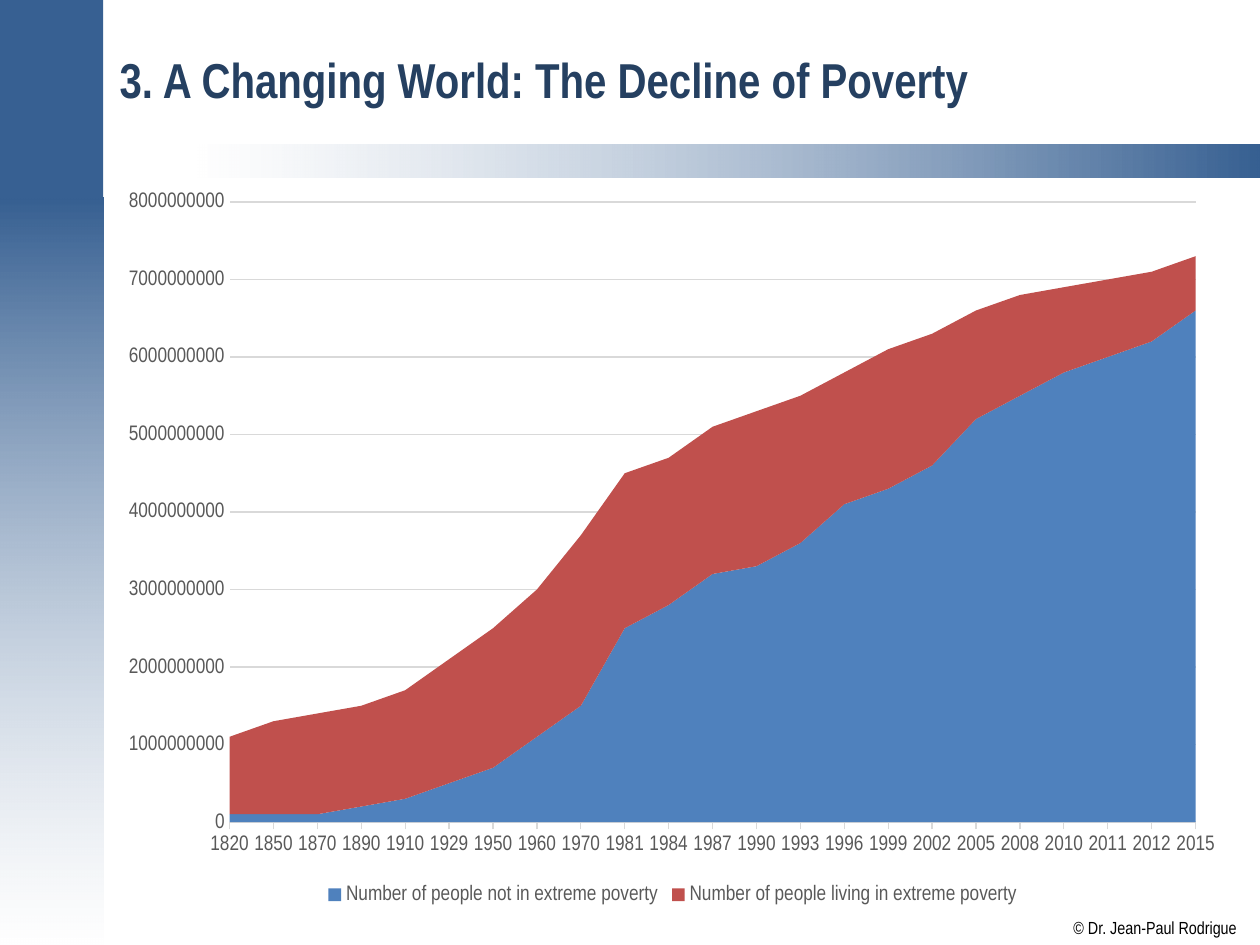
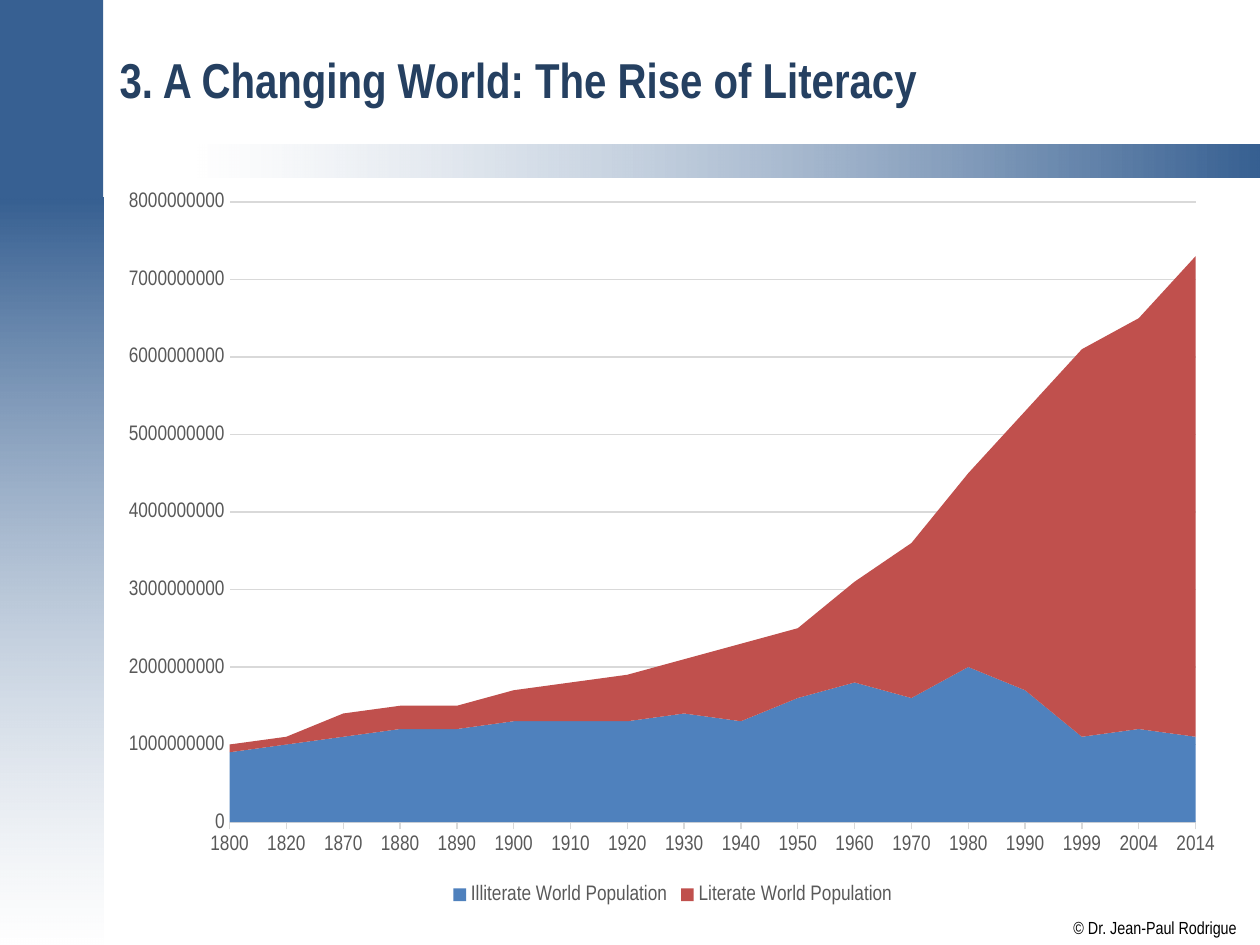
from dataclasses import dataclass

from lxml import etree
from pptx import Presentation
from pptx.chart.data import CategoryChartData
from pptx.dml.color import RGBColor
from pptx.enum.chart import XL_CHART_TYPE, XL_LEGEND_POSITION, XL_TICK_MARK
from pptx.enum.shapes import MSO_SHAPE
from pptx.enum.text import MSO_ANCHOR, PP_ALIGN
from pptx.oxml import parse_xml
from pptx.oxml.ns import nsdecls, qn
from pptx.util import Inches, Pt

RECTANGLE = MSO_SHAPE.RECTANGLE
STACKED_AREA = XL_CHART_TYPE.AREA_STACKED
LEGEND_BOTTOM = XL_LEGEND_POSITION.BOTTOM
TICK_NONE, TICK_OUT = XL_TICK_MARK.NONE, XL_TICK_MARK.OUTSIDE
MIDDLE, LEFT = MSO_ANCHOR.MIDDLE, PP_ALIGN.LEFT

COLUMNS, ROWS = 100, 75
HUNDRED_MILLION = 10 ** 8
CREDIT = "© Dr. Jean-Paul Rodrigue"


@dataclass(frozen=True)
class Theme:
    font: str = "Arial Narrow"
    title_size: int = 28
    axis_size: int = 12
    small_size: int = 10
    title: str = "254061"
    band: str = "376092"
    paper: str = "FFFFFF"
    ink: str = "000000"
    label: str = "595959"
    rule: str = "D9D9D9"
    areas: tuple = ("4F81BD", "C0504D")


class Deck:
    def __init__(self, theme):
        self.theme = theme
        self.deck = Presentation()
        self.deck.slide_width = Inches(10)
        self.deck.slide_height = Inches(7.5)
        self.page = None

    def place(self, left, top, width, height):
        column = self.deck.slide_width / COLUMNS
        row = self.deck.slide_height / ROWS
        return (round(left * column), round(top * row),
                round(width * column), round(height * row))

    def style(self, font, size, color, bold=False):
        font.name = self.theme.font
        font.size = Pt(size)
        font.bold = bold
        font.color.rgb = RGBColor.from_string(color)

    def new_page(self, title):
        self.page = self.deck.slides.add_slide(self.deck.slide_layouts[5])
        band, paper = self.theme.band, self.theme.paper
        self.band((-0.1, 15.7, 8.3, 59.3), ((band, 100), (paper, 51)), 270)
        self.band((15.7, 11.5, 84.3, 2.6), ((paper, 50), (band, 100)), 0)
        self.band((-0.1, -0.1, 8.3, 15.8), ((band, 100),))
        self.credit()
        self.title(title)

    def band(self, area, stops, angle=0):
        box = self.page.shapes.add_shape(RECTANGLE, *self.place(*area))
        box.shadow.inherit = False
        box.line.fill.background()
        if len(stops) == 1:
            box.fill.solid()
            box.fill.fore_color.rgb = RGBColor.from_string(stops[0][0])
            return
        box.fill.gradient()
        box.fill.gradient_angle = angle
        for position, (stop, (color, _)) in enumerate(zip(box.fill.gradient_stops, stops)):
            stop.position = position
            stop.color.rgb = RGBColor.from_string(color)
        colors = box.element.spPr.iter(qn("a:srgbClr"))
        for node, (_, opacity) in zip(colors, stops):
            if opacity < 100:
                etree.SubElement(node, qn("a:alpha")).set("val", str(opacity * 1000))

    def title(self, text):
        box = self.page.shapes.title
        box.left, box.top, box.width, box.height = self.place(8.5, 1.1, 89.8, 10.4)
        frame = box.text_frame
        frame.text = text
        frame.vertical_anchor = MIDDLE
        para = frame.paragraphs[0]
        para.alignment = LEFT
        self.style(para.runs[0].font, self.theme.title_size, self.theme.title, True)

    def credit(self):
        box = self.page.shapes.add_textbox(*self.place(85.2, 72.8, 13, 1.7))
        frame = box.text_frame
        frame.text = CREDIT
        frame.word_wrap = False
        frame.margin_left = frame.margin_right = frame.margin_top = frame.margin_bottom = 0
        self.style(frame.paragraphs[0].runs[0].font, self.theme.small_size, self.theme.ink)

    def rule(self, line):
        line.color.rgb = RGBColor.from_string(self.theme.rule)
        line.width = Pt(0.75)

    def area_chart(self, years, series):
        theme = self.theme
        data = CategoryChartData()
        data.categories = years.split()
        for name, values in series.items():
            data.add_series(name, [value * HUNDRED_MILLION for value in values])
        chart = self.page.shapes.add_chart(
            STACKED_AREA, *self.place(8.3, 14.3, 90.2, 57.9), data).chart
        self.style(chart.font, theme.small_size, theme.ink)
        chart.has_title = False
        chart.has_legend = True
        chart.legend.position = LEGEND_BOTTOM
        chart.legend.include_in_layout = False
        self.style(chart.legend.font, theme.axis_size, theme.label)
        plot = chart.plots[0]
        plot.vary_by_categories = False
        for area, color in zip(plot.series, theme.areas):
            area.format.fill.solid()
            area.format.fill.fore_color.rgb = RGBColor.from_string(color)
        self.axes(chart)
        self.plot_layout(chart, x=0.11, y=0.03, w=0.85, h=0.85)

    def axes(self, chart):
        years, people = chart.category_axis, chart.value_axis
        for axis, tick in ((years, TICK_OUT), (people, TICK_NONE)):
            axis.major_tick_mark = tick
            axis.minor_tick_mark = TICK_NONE
            self.style(axis.tick_labels.font, self.theme.axis_size, self.theme.label)
        years.has_major_gridlines = False
        self.rule(years.format.line)
        people.format.line.fill.background()
        people.has_major_gridlines = True
        self.rule(people.major_gridlines.format.line)
        people.minimum_scale = 0
        people.maximum_scale = 80 * HUNDRED_MILLION
        people.major_unit = 10 * HUNDRED_MILLION
        for node in chart.element.iter(qn("c:crossBetween")):
            node.set("val", "midCat")

    def plot_layout(self, chart, **shares):
        modes = "".join(f'<c:{side}Mode val="edge"/>' for side in "xy")
        sizes = "".join(f'<c:{side} val="{share}"/>' for side, share in shares.items())
        layout = parse_xml(
            f'<c:layout {nsdecls("c")}><c:manualLayout><c:layoutTarget val="inner"/>'
            f'{modes}{sizes}</c:manualLayout></c:layout>')
        plot_area = next(chart.element.iter(qn("c:plotArea")))
        for node in plot_area.findall(qn("c:layout")):
            plot_area.remove(node)
        plot_area.insert(0, layout)


PAGES = (
    (
        "3. A Changing World: The Decline of Poverty",
        "1820 1850 1870 1890 1910 1929 1950 1960 1970 1981 1984 1987 "
        "1990 1993 1996 1999 2002 2005 2008 2010 2011 2012 2015",
        {
            "Number of people not in extreme poverty": (
                1, 1, 1, 2, 3, 5, 7, 11, 15, 25, 28, 32,
                33, 36, 41, 43, 46, 52, 55, 58, 60, 62, 66),
            "Number of people living in extreme poverty": (
                10, 12, 13, 13, 14, 16, 18, 19, 22, 20, 19, 19,
                20, 19, 17, 18, 17, 14, 13, 11, 10, 9, 7),
        },
    ),
    (
        "3. A Changing World: The Rise of Literacy",
        "1800 1820 1870 1880 1890 1900 1910 1920 1930 "
        "1940 1950 1960 1970 1980 1990 1999 2004 2014",
        {
            "Illiterate World Population": (
                9, 10, 11, 12, 12, 13, 13, 13, 14,
                13, 16, 18, 16, 20, 17, 11, 12, 11),
            "Literate World Population": (
                1, 1, 3, 3, 3, 4, 5, 6, 7,
                10, 9, 13, 20, 25, 36, 50, 53, 62),
        },
    ),
)


def main():
    show = Deck(Theme())
    for title, years, series in PAGES:
        show.new_page(title)
        show.area_chart(years, series)
    show.deck.save("out.pptx")


if __name__ == "__main__":
    main()
